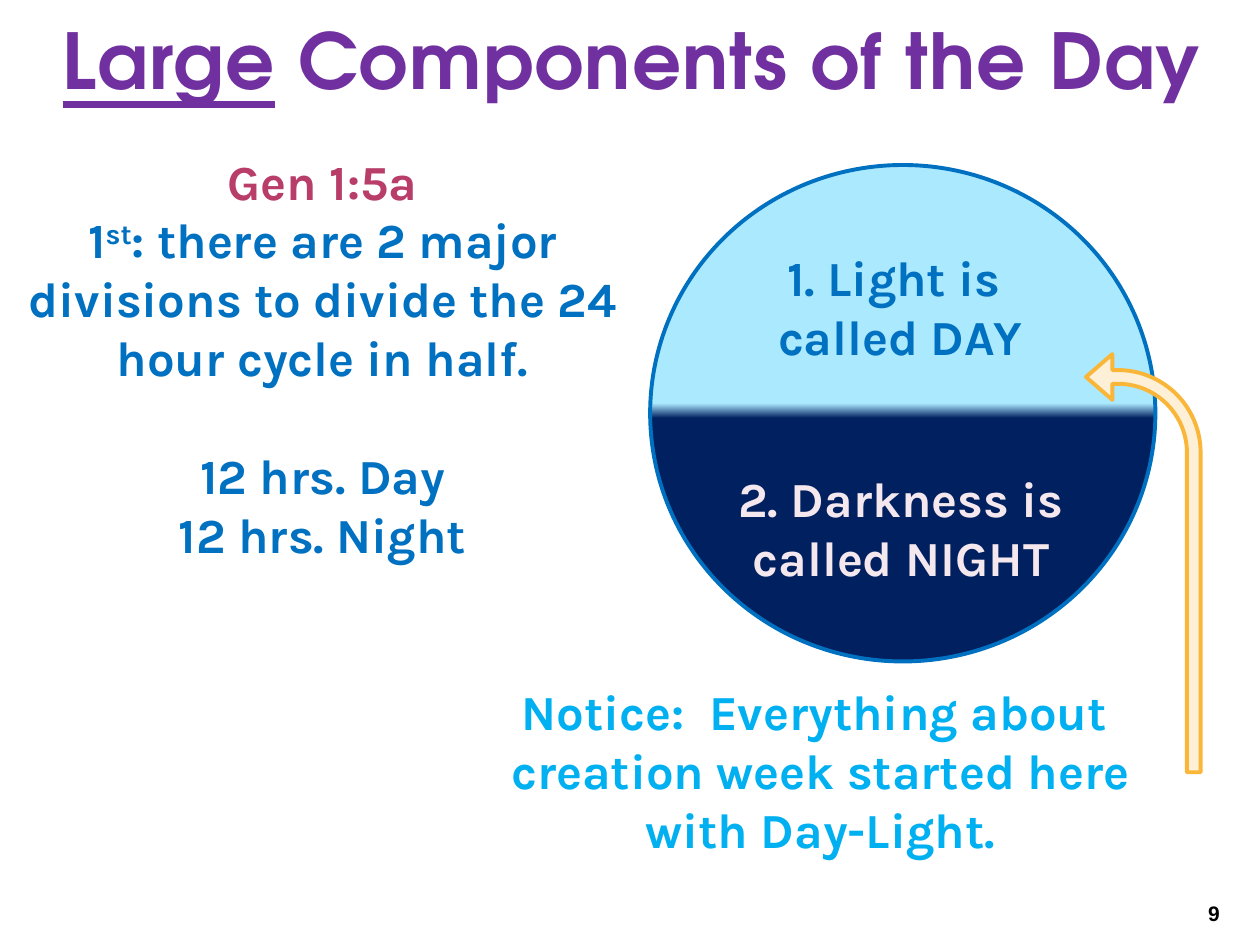
from dataclasses import dataclass

from pptx import Presentation
from pptx.dml.color import RGBColor
from pptx.enum.shapes import MSO_SHAPE
from pptx.enum.text import MSO_ANCHOR, MSO_AUTO_SIZE, PP_ALIGN
from pptx.util import Pt


@dataclass(frozen=True)
class Theme:
    title_font: str = "TeX Gyre Adventor"
    body_font: str = "Karla"
    number_font: str = "Arial"
    title_size: int = 44
    body_size: int = 28
    number_size: int = 12
    outline: float = 2.25
    purple: str = "7030A0"
    rose: str = "B83D68"
    blue: str = "0070C0"
    sky: str = "00B0F0"
    daylight: str = "ABE9FF"
    night: str = "002060"
    pale_rose: str = "F4E7ED"
    cream: str = "FEF0D7"
    amber: str = "F9B639"
    black: str = "000000"


class SlideBuilder:
    def __init__(self, page, theme):
        self.page = page
        self.theme = theme

    def span(self, para, words, style):
        """Add a run; line feeds in the words become line breaks."""
        for index, line in enumerate(words.split("\n")):
            if index:
                para.add_line_break()
            if not line:
                continue
            span = para.add_run()
            span.text = line
            values = {"name": self.theme.body_font, "size": self.theme.body_size,
                      "bold": True, **style}
            values["size"] = Pt(values["size"])
            span.font.color.rgb = RGBColor.from_string(values.pop("color"))
            for key in ("baseline", "spc"):
                if key in values:
                    span.font._element.set(key, str(values.pop(key)))
            for name, value in values.items():
                setattr(span.font, name, value)

    def text(self, place, paragraphs, gaps=None, grow=True,
             anchor=MSO_ANCHOR.TOP):
        """Add a centred text box; gaps maps a paragraph index to space before."""
        box = self.page.shapes.add_textbox(*map(Pt, place))
        frame = box.text_frame
        frame_format = {
            "word_wrap": True,
            "vertical_anchor": anchor,
            "auto_size": MSO_AUTO_SIZE.SHAPE_TO_FIT_TEXT if grow else MSO_AUTO_SIZE.NONE,
        }
        for name, value in frame_format.items():
            setattr(frame, name, value)
        for index, spans in enumerate(paragraphs):
            para = frame.add_paragraph() if index else frame.paragraphs[0]
            para.alignment = PP_ALIGN.CENTER
            if gaps and index in gaps:
                para.space_before = Pt(gaps[index])
            for words, style in spans:
                self.span(para, words, style)

    def shape(self, kind, place, line):
        shape = self.page.shapes.add_shape(kind, *map(Pt, place))
        shape.shadow.inherit = False
        shape.line.color.rgb = RGBColor.from_string(line)
        shape.line.width = Pt(self.theme.outline)
        return shape

    def split_circle(self, place, stops, line):
        fill = self.shape(MSO_SHAPE.OVAL, place, line).fill
        fill.gradient()
        fill.gradient_angle = 270
        for stop, (position, color) in zip(fill.gradient_stops, stops):
            stop.position = position
            stop.color.rgb = RGBColor.from_string(color)

    def bent_arrow(self, place, adjustments, fill, line):
        arrow = self.shape(MSO_SHAPE.BENT_ARROW, place, line)
        arrow.fill.solid()
        arrow.fill.fore_color.rgb = RGBColor.from_string(fill)
        for index, value in enumerate(adjustments):
            arrow.adjustments[index] = value
        arrow._element.spPr.xfrm.set("flipH", "1")


def main():
    theme = Theme()
    deck = Presentation()
    deck.slide_width, deck.slide_height = Pt(720), Pt(540)
    slide = SlideBuilder(deck.slides.add_slide(deck.slide_layouts[6]), theme)
    blue = {"color": theme.blue}

    # Verse and the two halves of the cycle
    slide.text((7.2, 82.8, 354.2, 278.6), [
        [("Gen 1:5a\n", {"color": theme.rose}),
         ("1", blue),
         ("st", {**blue, "baseline": 30000}),
         (": there are 2 major divisions to divide the 24 hour cycle in half.", blue)],
        [("12 hrs. Day", blue)],
        [("12 hrs. Night", blue)],
    ], gaps={1: 34})

    # Day and night circle with its labels
    slide.split_circle((371.5, 94.3, 288.7, 283.7),
                       [(0.48, theme.daylight), (0.51, theme.night)], theme.blue)
    slide.text((385.9, 138.2, 257, 74.9), [[("1. Light is \ncalled DAY", blue)]])
    slide.text((406.1, 264.2, 217.4, 74.9),
               [[("2. Darkness is called NIGHT", {"color": theme.pale_rose})]])

    # Title
    title = {"name": theme.title_font, "size": theme.title_size,
             "color": theme.purple, "spc": 50}
    slide.text((25.2, 3.6, 672.5, 72),
               [[("Large", {**title, "underline": True}),
                 (" Components of the Day", title)]], grow=False)

    # Notice and the arrow to daylight
    slide.text((252, 385.9, 433.4, 108.7), [[(
        "Notice:  Everything about \ncreation week started here\nwith Day-Light.",
        {"color": theme.sky})]])
    slide.bent_arrow((620.6, 202.3, 65.5, 239), (0.12, 0.2, 0.23, 0.72),
                     theme.cream, theme.amber)

    # Page number
    slide.text((676.8, 507.6, 33.8, 28.8),
               [[("9", {"name": theme.number_font, "size": theme.number_size,
                        "color": theme.black})]],
               grow=False, anchor=MSO_ANCHOR.MIDDLE)

    deck.save("out.pptx")


if __name__ == "__main__":
    main()
